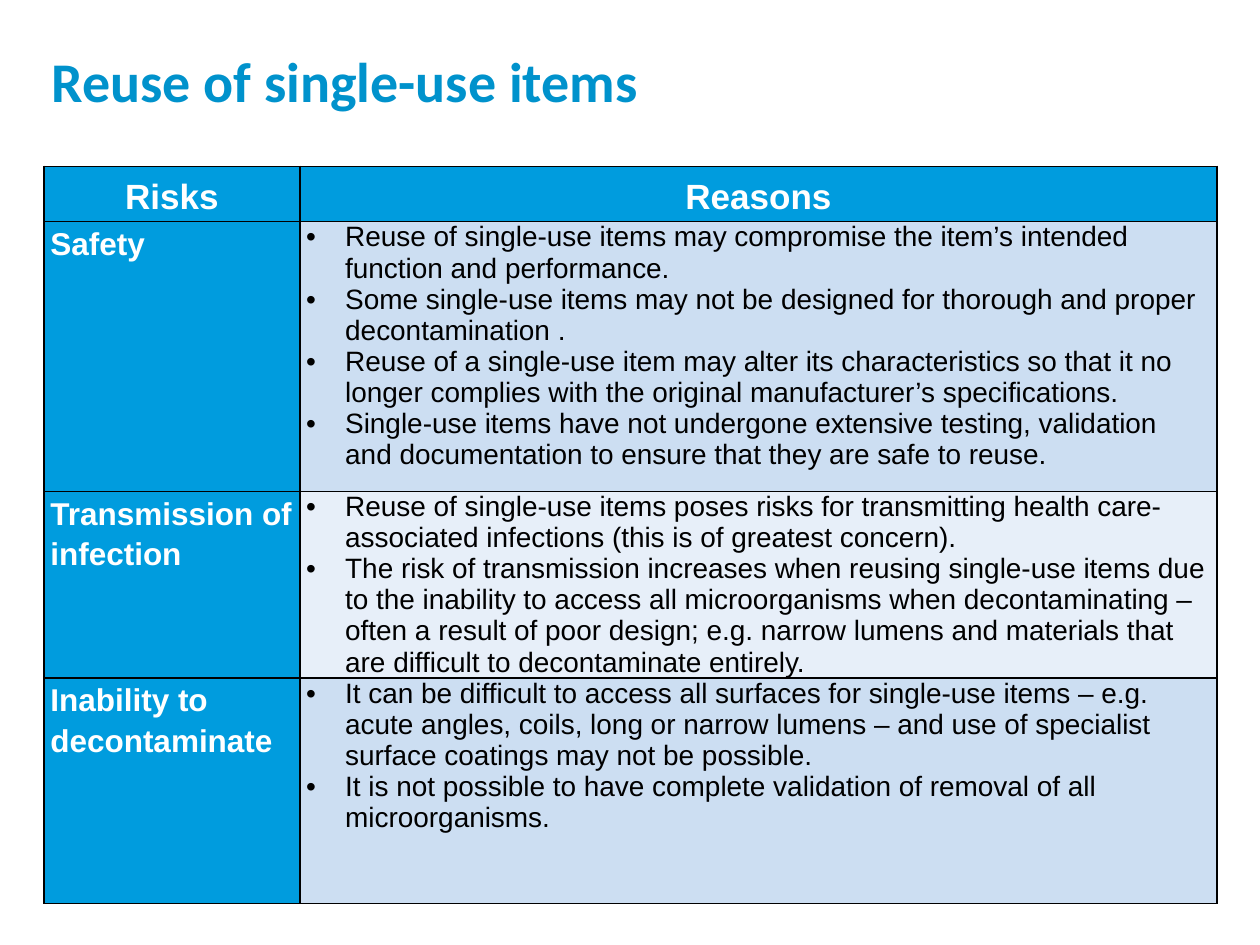
"""Build the slide on the risks of reusing single-use items."""
from dataclasses import dataclass

from lxml import etree
from pptx import Presentation
from pptx import util as u
from pptx.dml.color import RGBColor
from pptx.enum import text
from pptx.oxml import ns


@dataclass(frozen=True)
class Theme:
    title_color: str = "0092CC"
    heading_fill: str = "009CDE"
    heading_color: str = "FFFFFF"
    body_color: str = "000000"
    border: str = "000000"
    bands: tuple = ("CCDEF2", "E7EFF9")
    title_font: str = "Calibri"
    table_font: str = "Arial"
    title_size: int = 32
    header_size: int = 20
    risk_size: int = 18
    reason_size: int = 16


theme = Theme()
header = ("Risks", "Reasons")
risks = [
    ("Safety", [
        "Reuse of single-use items may compromise the item’s intended function and performance.",
        "Some single-use items may not be designed for thorough and proper decontamination .",
        "Reuse of a single-use item may alter its characteristics so that it no longer complies "
        "with the original manufacturer’s specifications.",
        "Single-use items have not undergone extensive testing, validation and documentation "
        "to ensure that they are safe to reuse.",
    ]),
    ("Transmission of infection", [
        "Reuse of single-use items poses risks for transmitting health care-associated "
        "infections (this is of greatest concern).",
        "The risk of transmission increases when reusing single-use items due to the inability "
        "to access all microorganisms when decontaminating – often a result of poor design; "
        "e.g. narrow lumens and materials that are difficult to decontaminate entirely.",
    ]),
    ("Inability to decontaminate", [
        "It can be difficult to access all surfaces for single-use items – e.g. acute angles, "
        "coils, long or narrow lumens – and use of specialist surface coatings may not be possible.",
        "It is not possible to have complete validation of removal of all microorganisms.",
    ]),
]
column_widths = (2.03, 7.28)
row_heights = (0.44, 2.14, 1.48, 1.79)


def add_run(paragraph, words, font, size, color, bold):
    run = paragraph.add_run()
    run.text = words
    run.font.name = font
    run.font.size = u.Pt(size)
    run.font.bold = bold
    run.font.color.rgb = RGBColor.from_string(color)


def style_cell(cell, fill):
    cell.margin_left = cell.margin_right = u.Inches(0.05)
    cell.margin_top = cell.margin_bottom = 0
    properties = cell._tc.get_or_add_tcPr()
    for side in ("lnL", "lnR", "lnT", "lnB"):
        line = etree.SubElement(properties, ns.qn(f"a:{side}"), w=str(u.Pt(1)))
        paint = etree.SubElement(line, ns.qn("a:solidFill"))
        etree.SubElement(paint, ns.qn("a:srgbClr"), val=theme.border)
    cell.fill.solid()
    cell.fill.fore_color.rgb = RGBColor.from_string(fill)


deck = Presentation()
deck.slide_width, deck.slide_height = u.Inches(10), u.Inches(7.5)
slide = deck.slides.add_slide(deck.slide_layouts[5])

title = slide.shapes.title
title.left, title.top = u.Inches(0.39), u.Inches(0.12)
title.width, title.height = u.Inches(6.69), u.Inches(0.79)
heading = title.text_frame
heading.margin_left, heading.margin_right = u.Inches(0.02), u.Inches(0.39)
heading.margin_top = heading.margin_bottom = 0
heading.vertical_anchor = text.MSO_ANCHOR.BOTTOM
heading.word_wrap = True
heading.paragraphs[0].alignment = text.PP_ALIGN.LEFT
heading.paragraphs[0].line_spacing = 0.9
add_run(heading.paragraphs[0], "Reuse of single-use items", theme.title_font,
        theme.title_size, theme.title_color, True)

risk_table = slide.shapes.add_table(
    len(row_heights), len(column_widths), u.Inches(0.35), u.Inches(1.32),
    u.Inches(sum(column_widths)), u.Inches(sum(row_heights))).table
risk_table.horz_banding = False
for column, width in zip(risk_table.columns, column_widths):
    column.width = u.Inches(width)
for row, height in zip(risk_table.rows, row_heights):
    row.height = u.Inches(height)

for column, label in enumerate(header):
    cell = risk_table.cell(0, column)
    style_cell(cell, theme.heading_fill)
    cell.vertical_anchor = text.MSO_ANCHOR.MIDDLE
    paragraph = cell.text_frame.paragraphs[0]
    paragraph.alignment = text.PP_ALIGN.CENTER
    paragraph.line_spacing = 1.15
    add_run(paragraph, label, theme.table_font, theme.header_size, theme.heading_color, True)

for row, (risk, reasons) in enumerate(risks, start=1):
    risk_cell, reason_cell = risk_table.cell(row, 0), risk_table.cell(row, 1)
    style_cell(risk_cell, theme.heading_fill)
    style_cell(reason_cell, theme.bands[(row - 1) % 2])
    paragraph = risk_cell.text_frame.paragraphs[0]
    paragraph.line_spacing = 1.15
    add_run(paragraph, risk, theme.table_font, theme.risk_size, theme.heading_color, True)

    frame = reason_cell.text_frame
    for index, reason in enumerate(reasons):
        paragraph = frame.add_paragraph() if index else frame.paragraphs[0]
        properties = paragraph._p.get_or_add_pPr()
        properties.set("marL", str(u.Inches(0.31)))
        properties.set("indent", str(-u.Inches(0.31)))
        etree.SubElement(properties, ns.qn("a:buFont"), typeface=theme.table_font)
        etree.SubElement(properties, ns.qn("a:buChar"), char="•")
        add_run(paragraph, reason, theme.table_font, theme.reason_size, theme.body_color, False)

deck.save("out.pptx")
